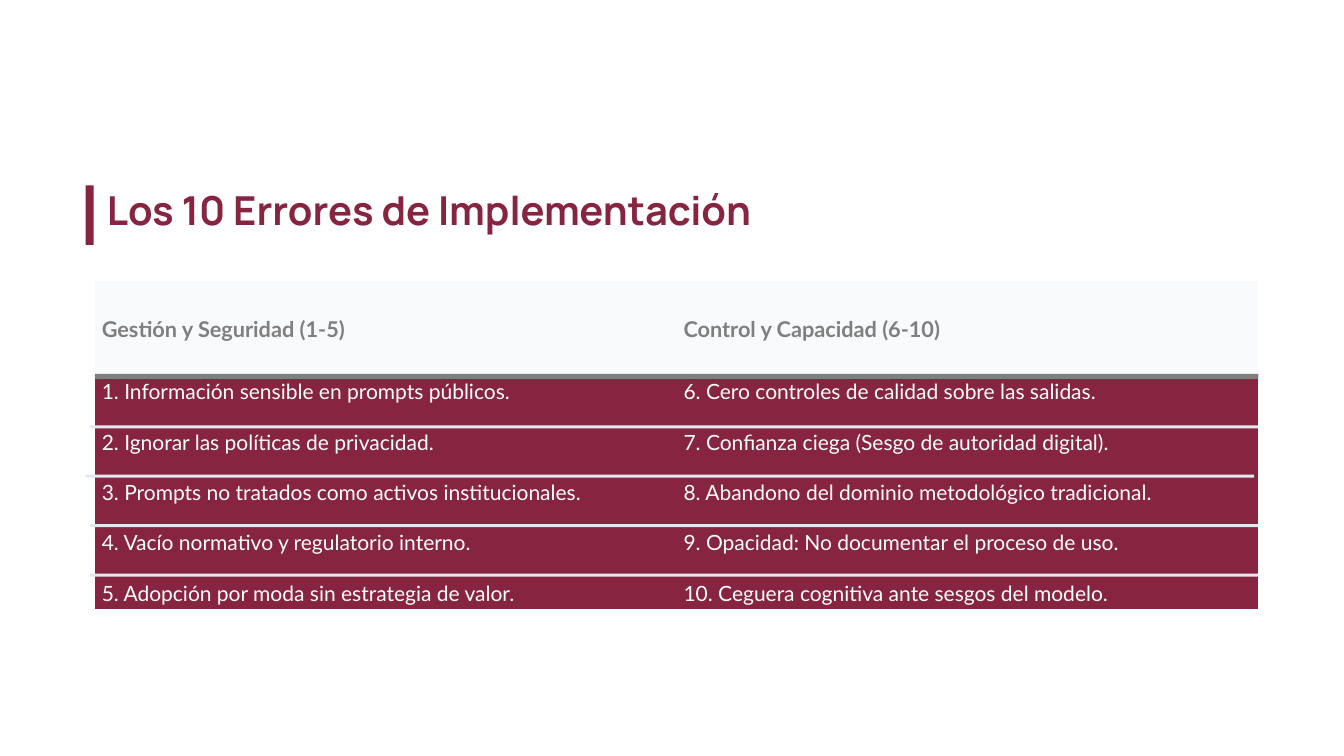
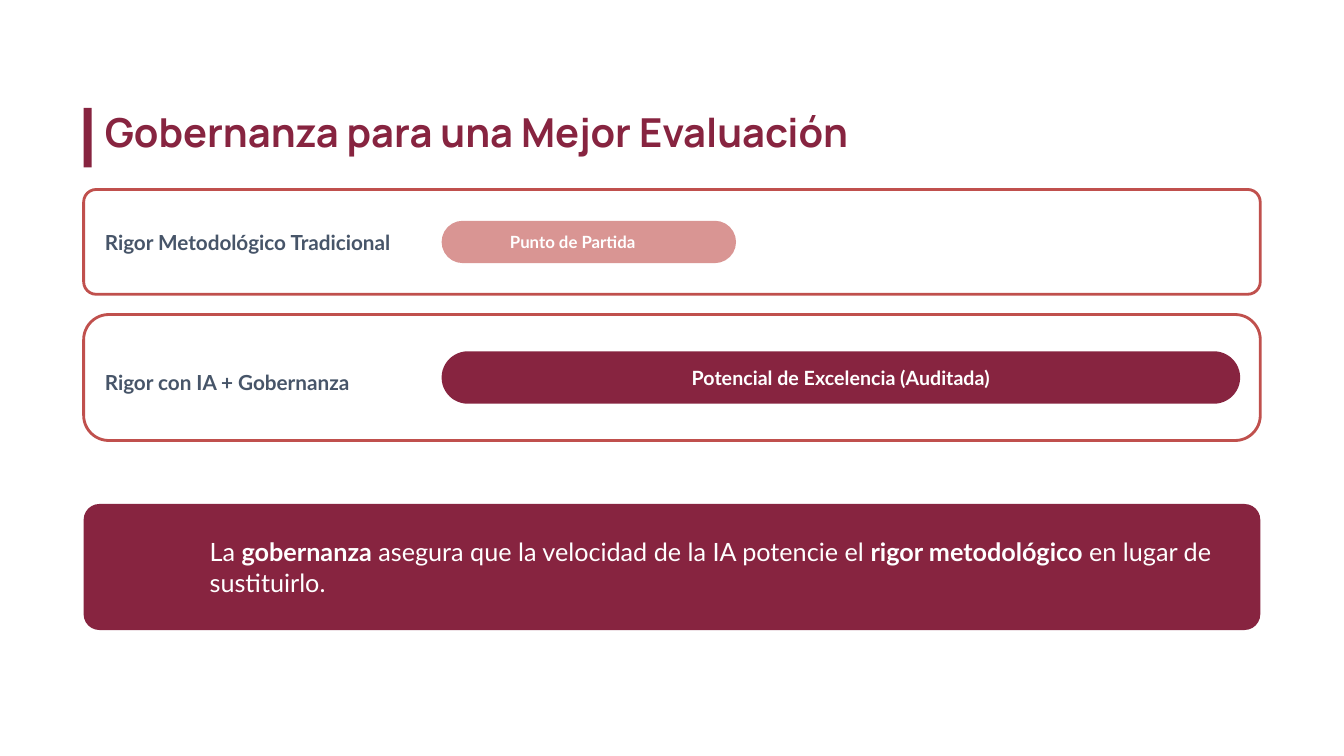
from lxml.etree import SubElement
from pptx import Presentation
from pptx.dml.color import RGBColor
from pptx.enum.shapes import MSO_SHAPE
from pptx.enum.text import MSO_ANCHOR, PP_ALIGN
from pptx.oxml.ns import qn
from pptx.util import Inches, Pt

HUES = {
    "wine": "872440",
    "rose": "D99593",
    "red": "C0504D",
    "slate": "475569",
    "gray": "7F7F7F",
    "mist": "E2E8F0",
    "pale": "F8FAFC",
    "white": "FFFFFF",
}
HEAD, BODY = "Manrope", "Lato"

ERRORS = [
    ("Gestión y Seguridad (1-5)", [
        "1. Información sensible en prompts públicos.",
        "2. Ignorar las políticas de privacidad.",
        "3. Prompts no tratados como activos institucionales.",
        "4. Vacío normativo y regulatorio interno.",
        "5. Adopción por moda sin estrategia de valor.",
    ]),
    ("Control y Capacidad (6-10)", [
        "6. Cero controles de calidad sobre las salidas.",
        "7. Confianza ciega (Sesgo de autoridad digital).",
        "8. Abandono del dominio metodológico tradicional.",
        "9. Opacidad: No documentar el proceso de uso.",
        "10. Ceguera cognitiva ante sesgos del modelo.",
    ]),
]
CLAIM = [
    ("La ", False),
    ("gobernanza", True),
    (" asegura que la velocidad de la IA potencie el ", False),
    ("rigor metodológico", True),
    (" en lugar de sustituirlo.", False),
]


def color(name):
    """Return the named colour."""
    return RGBColor.from_string(HUES[name])


def place(box):
    """Turn left, top, width and height into lengths."""
    return [Inches(side) for side in box]


def write(para, text, size, hue, bold=True, font=BODY):
    """Add one styled run to a paragraph."""
    run = para.add_run()
    run.text = text
    run.font.size = Pt(size)
    run.font.name = font
    run.font.bold = bold
    run.font.color.rgb = color(hue)


def shape(slide, box, fill, curve=None, line=None):
    """Draw a plain block, rounded when a curve is given."""
    kind = MSO_SHAPE.RECTANGLE if curve is None else MSO_SHAPE.ROUNDED_RECTANGLE
    item = slide.shapes.add_shape(kind, *place(box))
    item.shadow.inherit = False
    item.fill.solid()
    item.fill.fore_color.rgb = color(fill)
    if curve is not None:
        item.adjustments[0] = curve
    if line:
        item.line.color.rgb = color(line)
        item.line.width = Pt(2)
    else:
        item.line.fill.background()


def label(slide, box, runs, size, hue, align=PP_ALIGN.LEFT,
          anchor=MSO_ANCHOR.MIDDLE, font=BODY):
    """Place a text box without margins, made of (text, bold) runs."""
    frame = slide.shapes.add_textbox(*place(box)).text_frame
    frame.word_wrap = True
    frame.vertical_anchor = anchor
    frame.margin_left = frame.margin_right = 0
    frame.margin_top = frame.margin_bottom = 0
    para = frame.paragraphs[0]
    para.alignment = align
    for text, bold in runs:
        write(para, text, size, hue, bold, font)


def title(slide, left, top, text):
    """Draw the title with its side bar."""
    label(slide, (left + 0.21, top, 12.03, 0.48), [(text, True)], 28.5, "wine",
          anchor=MSO_ANCHOR.TOP, font=HEAD)
    shape(slide, (left, top, 0.08, 0.59), "wine")


def fill_cell(cell, lines, size, hue, fill):
    """Fill a borderless cell with spaced paragraphs."""
    props = cell._tc.get_or_add_tcPr()
    for side in ("lnL", "lnR", "lnT", "lnB"):
        SubElement(SubElement(props, qn("a:" + side)), qn("a:noFill"))
    cell.fill.solid()
    cell.fill.fore_color.rgb = color(fill)
    cell.vertical_anchor = MSO_ANCHOR.MIDDLE
    cell.margin_left = cell.margin_right = Inches(0.07)
    cell.margin_top = cell.margin_bottom = Inches(0.03)
    frame = cell.text_frame
    for rank, line in enumerate(lines):
        para = frame.add_paragraph() if rank else frame.paragraphs[0]
        if rank:
            para.space_before = Pt(18)
        write(para, line, size, hue, fill == "pale")


def errors(slide, box):
    """Draw the table of errors and the rules across it."""
    left, top, width, height = box
    table = slide.shapes.add_table(2, len(ERRORS), *place(box)).table
    table.first_row = table.horz_banding = False
    table.rows[0].height = Inches(0.94)
    table.rows[1].height = Inches(height - 0.94)
    for col, (head, lines) in enumerate(ERRORS):
        table.columns[col].width = Inches(width / len(ERRORS))
        fill_cell(table.cell(0, col), [head], 15.5, "gray", "pale")
        fill_cell(table.cell(1, col), lines, 15, "white", "wine")
    for rank, shift in enumerate((0.05, 0.09, 0.05, 0.05)):
        rule = (left - shift, top + 1.43 + 0.49 * rank, width + 0.05, 0.03)
        shape(slide, rule, "mist")
    shape(slide, (left, top + 0.92, width, 0.05), "gray")


def panel(slide, box, curve, name, pill, fill, note, size, drop=0, shift=0):
    """Draw a framed row with a name and a bar centred in its height."""
    left, top, width, height = box
    long, tall = pill
    start, mid = left + 3.55, top + (height - tall) / 2
    shape(slide, box, "white", curve, "red")
    shape(slide, (start, mid, long, tall), fill, 0.5)
    label(slide, (left + 0.21, mid + drop, 3.12, tall), [(name, True)],
          14.8, "slate")
    label(slide, (start + shift, mid, long, tall), [(note, True)],
          size, "white", PP_ALIGN.CENTER)


def claim(slide, box):
    """Draw the closing band with its message."""
    left, top, width, height = box
    shape(slide, box, "wine", 0.125)
    label(slide, (left + 1.25, top, width - 1.57, height), CLAIM, 18, "white")


def list_slide(slide):
    """Build the slide with the ten errors."""
    errors(slide, (0.94, 2.79, 11.54, 3.25))
    title(slide, 0.85, 1.84, "Los 10 Errores de Implementación")


def rigor_slide(slide):
    """Build the slide that compares both kinds of rigor."""
    left, width = 0.83, 11.67
    title(slide, left, 1.07, "Gobernanza para una Mejor Evaluación")
    panel(slide, (left, 1.88, width, 1.04), 0.12,
          "Rigor Metodológico Tradicional", (2.92, 0.42), "rose",
          "Punto de Partida", 12, shift=-0.16)
    panel(slide, (left, 3.12, width, 1.25), 0.2,
          "Rigor con IA + Gobernanza", (7.92, 0.52), "wine",
          "Potencial de Excelencia (Auditada)", 14, drop=0.05)
    claim(slide, (left, 5, width, 1.25))


def main():
    """Build and save the deck."""
    deck = Presentation()
    deck.slide_width, deck.slide_height = Inches(13.33), Inches(7.5)
    for build in (list_slide, rigor_slide):
        build(deck.slides.add_slide(deck.slide_layouts[6]))
    deck.save("out.pptx")


if __name__ == "__main__":
    main()
